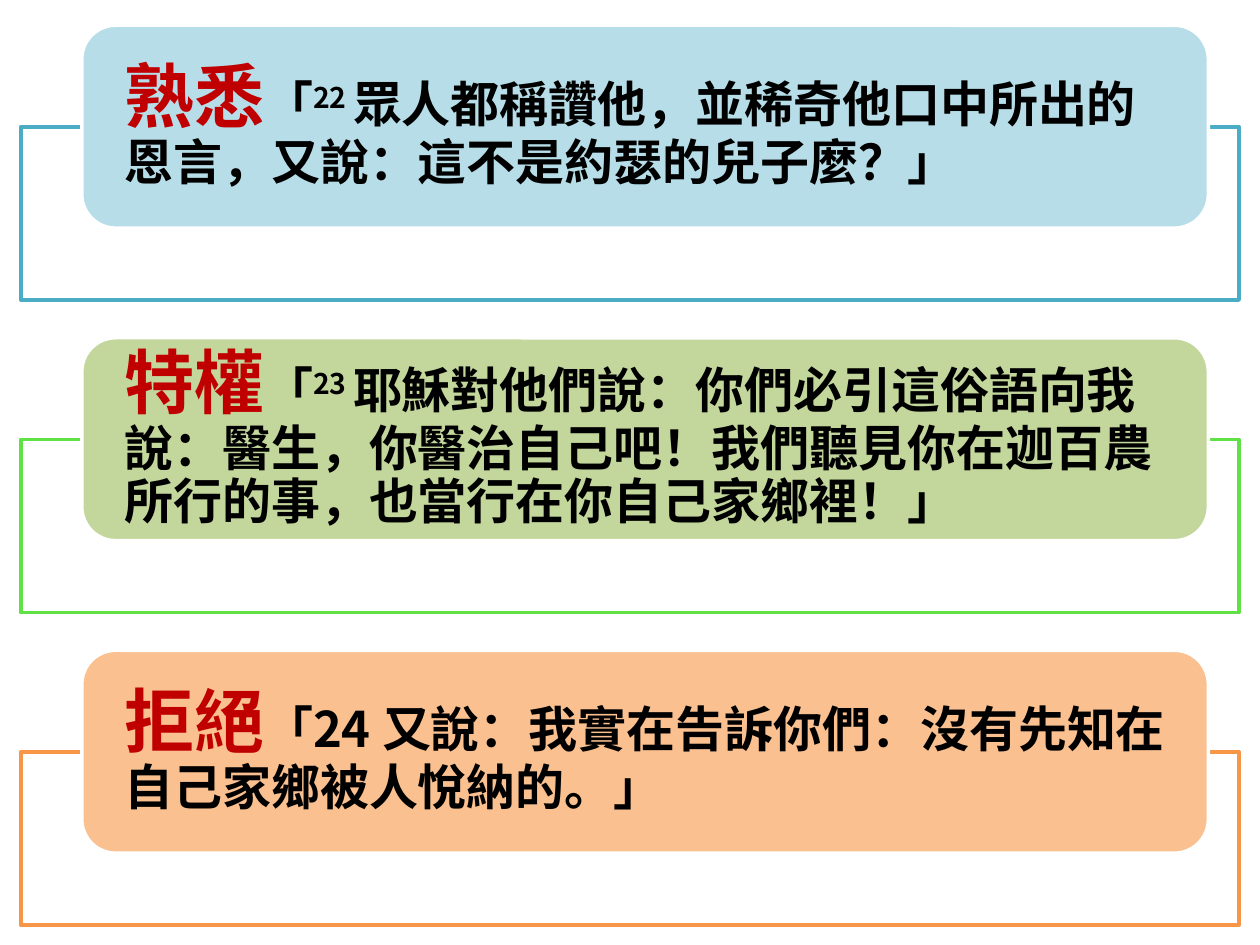
import pptx
import pptx.dml.color
import pptx.enum.shapes
import pptx.enum.text
import pptx.oxml
import pptx.oxml.ns
import pptx.util
from pptx.util import Cm

FONT = "Noto Sans CJK SC"
COLORS = {
    "white": "FFFFFF",
    "heading": "C00000",
    "verse": "000000",
    "blue_line": "4BACC6", "blue_fill": "B7DEE8",
    "green_line": "60E146", "green_fill": "C3D69B",
    "orange_line": "F79646", "orange_fill": "FAC090",
}
# Each run after the heading: (text, is superscript)
SECTIONS = [
    ("blue", "熟悉", [
        ("「", False), ("22 ", True),
        ("眾人都稱讚他，並稀奇他口中所出的恩言，又說：這不是約瑟的兒子麼？」", False)]),
    ("green", "特權", [
        ("「", False), ("23 ", True),
        ("耶穌對他們說：你們必引這俗語向我說：醫生，你醫治自己吧！"
         "我們聽見你在迦百農所行的事，也當行在你自己家鄉裡！」", False)]),
    ("orange", "拒絕", [
        ("「24 又說：我實在告訴你們：沒有先知在自己家鄉被人悅納的。」", False)]),
]


def color(name):
    return pptx.dml.color.RGBColor.from_string(COLORS[name])


def add_box(slide, kind, left, top, width, height, fill, line):
    shape = slide.shapes.add_shape(kind, left, top, width, height)
    shape.shadow.inherit = False
    shape.fill.solid()
    shape.fill.fore_color.rgb = color(fill)
    shape.line.color.rgb = color(line)
    shape.line.width = pptx.util.Pt(2)
    return shape


def add_run(paragraph, text, size, color_name, superscript=False):
    run = paragraph.add_run()
    run.text = text
    run.font.size = pptx.util.Pt(size)
    run.font.bold = True
    run.font.name = FONT
    run.font.color.rgb = color(color_name)
    properties = run.font._element
    # East Asian text takes its own typeface
    east_asian = pptx.oxml.parse_xml(
        f'<a:ea {pptx.oxml.ns.nsdecls("a")} typeface="{FONT}"/>')
    properties.find(pptx.oxml.ns.qn("a:latin")).addnext(east_asian)
    if superscript:
        properties.set("baseline", "30000")


def add_section(slide, left, top, width, height, theme, heading, verse):
    shapes = pptx.enum.shapes.MSO_SHAPE
    card_height = Cm(4.09)
    frame_top = top + card_height // 2

    # Outline frame, starting halfway down the card
    frame = add_box(slide, shapes.RECTANGLE, left, frame_top, width,
                    top + height - frame_top, "white", f"{theme}_line")
    frame_color = frame.fill._xPr.find(".//" + pptx.oxml.ns.qn("a:srgbClr"))
    frame_color.append(pptx.oxml.parse_xml(
        f'<a:alpha {pptx.oxml.ns.nsdecls("a")} val="90000"/>'))

    # Card with the heading and verse
    card = add_box(slide, shapes.ROUNDED_RECTANGLE, left + Cm(1.23), top,
                   Cm(22.71), card_height, f"{theme}_fill", "white")
    text_frame = card.text_frame
    text_frame.word_wrap = True
    text_frame.vertical_anchor = pptx.enum.text.MSO_ANCHOR.MIDDLE
    text_frame.margin_left = text_frame.margin_right = Cm(0.66)
    text_frame.margin_top = text_frame.margin_bottom = 0
    paragraph = text_frame.paragraphs[0]
    paragraph.alignment = pptx.enum.text.PP_ALIGN.LEFT
    paragraph.line_spacing = 0.9
    paragraph._p.get_or_add_pPr().append(pptx.oxml.parse_xml(
        f'<a:spcAft {pptx.oxml.ns.nsdecls("a")}><a:spcPct val="35000"/></a:spcAft>'))
    add_run(paragraph, heading, 40, "heading")
    for text, superscript in verse:
        add_run(paragraph, text, 28, "verse", superscript)


def main():
    presentation = pptx.Presentation()
    presentation.slide_width = Cm(25.4)
    presentation.slide_height = Cm(19.05)
    slide = presentation.slides.add_slide(presentation.slide_layouts[6])

    # Three sections at an equal pitch
    for index, section in enumerate(SECTIONS):
        add_section(slide, Cm(0.42), Cm(0.51 + 6.3 * index),
                    Cm(24.56), Cm(5.54), *section)
    presentation.save("out.pptx")


if __name__ == "__main__":
    main()
